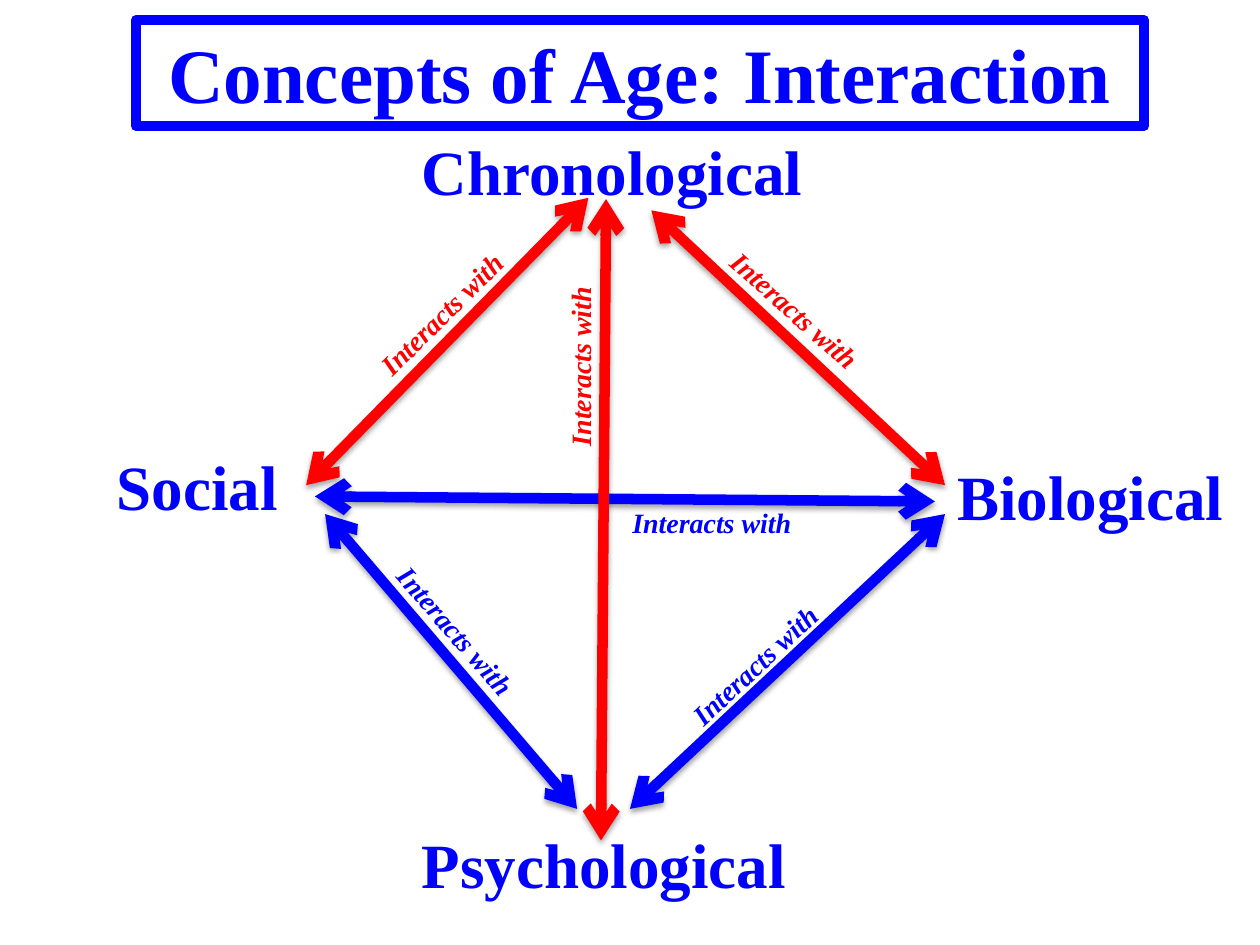
"""Build a slide showing how the four concepts of age interact."""
import pptx
import pptx.dml.color
import pptx.enum.shapes
import pptx.enum.text
import pptx.oxml
import pptx.oxml.ns
import pptx.util

Inches = pptx.util.Inches
Pt = pptx.util.Pt
BLUE = pptx.dml.color.RGBColor(0x00, 0x00, 0xFF)
RED = pptx.dml.color.RGBColor(0xFF, 0x00, 0x00)
WHITE = pptx.dml.color.RGBColor(0xFF, 0xFF, 0xFF)
FONT = "Times New Roman"
LINE_WIDTH = Pt(6)

TITLE = ("Concepts of Age: Interaction", (1.08, 0.16, 8, 0.84))
CONCEPTS = [
    ("Chronological", (3.25, 1, 3.25, 0.71)),
    ("Biological", (7.5, 3.58, 2.5, 0.71)),
    ("Psychological", (3.25, 6.5, 3.17, 0.71)),
    ("Social", (0.83, 3.5, 1.6, 0.71)),
]
LINK_TEXT = "Interacts with"
LINKS = [
    {"color": BLUE, "ends": (7.5, 4.08, 5, 6.42), "label": (5.23, 5.02, 1.67, 0.37), "turn": 316.9},
    {"color": BLUE, "ends": (2.58, 4.08, 4.58, 6.42), "label": (2.85, 4.9, 1.67, 0.37), "turn": 48.9},
    {"color": BLUE, "ends": (7.42, 3.98, 2.5, 3.94), "label": (4.92, 3.96, 1.67, 0.37), "turn": 0},
    {"color": RED, "ends": (4.81, 1.58, 4.77, 6.67), "label": (3.87, 2.72, 1.47, 0.37), "turn": 270},
    {"color": RED, "ends": (7.5, 3.85, 5.17, 1.67), "label": (5.53, 2.4, 1.83, 0.37), "turn": 41.9},
    {"color": RED, "ends": (4.67, 1.57, 2.43, 3.85), "label": (2.77, 2.3, 1.48, 0.37), "turn": 315.4},
]
SHADOW = (
    '<a:effectLst %s><a:outerShdw blurRad="39370" dist="22860" dir="5400000" rotWithShape="0">'
    '<a:srgbClr val="000000"><a:alpha val="35000"/></a:srgbClr></a:outerShdw></a:effectLst>'
    % pptx.oxml.ns.nsdecls("a")
)


def write(box, text, size, color, italic=False):
    frame = box.text_frame
    frame.word_wrap = True
    frame.text = text
    font = frame.paragraphs[0].runs[0].font
    font.name, font.size, font.bold, font.italic = FONT, Pt(size), True, italic
    font.color.rgb = color


def add_text(shapes, text, place, size, color, italic=False):
    box = shapes.add_textbox(*map(Inches, place))
    write(box, text, size, color, italic)
    box.text_frame.margin_right = 0
    return box


def add_arrow(shapes, ends, color):
    arrow = shapes.add_connector(pptx.enum.shapes.MSO_CONNECTOR.STRAIGHT, *map(Inches, ends))
    arrow.line.width = LINE_WIDTH
    arrow.line.color.rgb = color
    line = arrow.line._get_or_add_ln()
    for end in ("headEnd", "tailEnd"):
        line.append(pptx.oxml.parse_xml(
            '<a:%s %s type="arrow"/>' % (end, pptx.oxml.ns.nsdecls("a"))))
    arrow._element.spPr.append(pptx.oxml.parse_xml(SHADOW))


def add_label(shapes, link):
    label = add_text(shapes, LINK_TEXT, link["label"], 16, link["color"], italic=True)
    label.rotation = link["turn"]
    if link["color"] == RED:
        label.fill.solid()
        label.fill.fore_color.rgb = WHITE


def add_link(page, link):
    shapes = page.shapes.add_group_shape().shapes
    if link["color"] == RED:
        add_label(shapes, link)
        add_arrow(shapes, link["ends"], link["color"])
    else:
        add_arrow(shapes, link["ends"], link["color"])
        add_label(shapes, link)


def add_title(page):
    text, place = TITLE
    title = page.shapes.title
    title.left, title.top, title.width, title.height = map(Inches, place)
    write(title, text, 44, BLUE)
    title.text_frame.auto_size = pptx.enum.text.MSO_AUTO_SIZE.NONE
    title.text_frame.vertical_anchor = pptx.enum.text.MSO_ANCHOR.MIDDLE
    title.text_frame.paragraphs[0].alignment = pptx.enum.text.PP_ALIGN.CENTER
    title.line.color.rgb = BLUE
    title.line.width = LINE_WIDTH


def main():
    deck = pptx.Presentation()
    deck.slide_width, deck.slide_height = Inches(10), Inches(7.5)
    page = deck.slides.add_slide(deck.slide_layouts[5])
    add_title(page)
    for text, place in CONCEPTS:
        add_text(page.shapes, text, place, 36, BLUE)
    for link in LINKS:
        add_link(page, link)
    deck.save("out.pptx")


if __name__ == "__main__":
    main()
